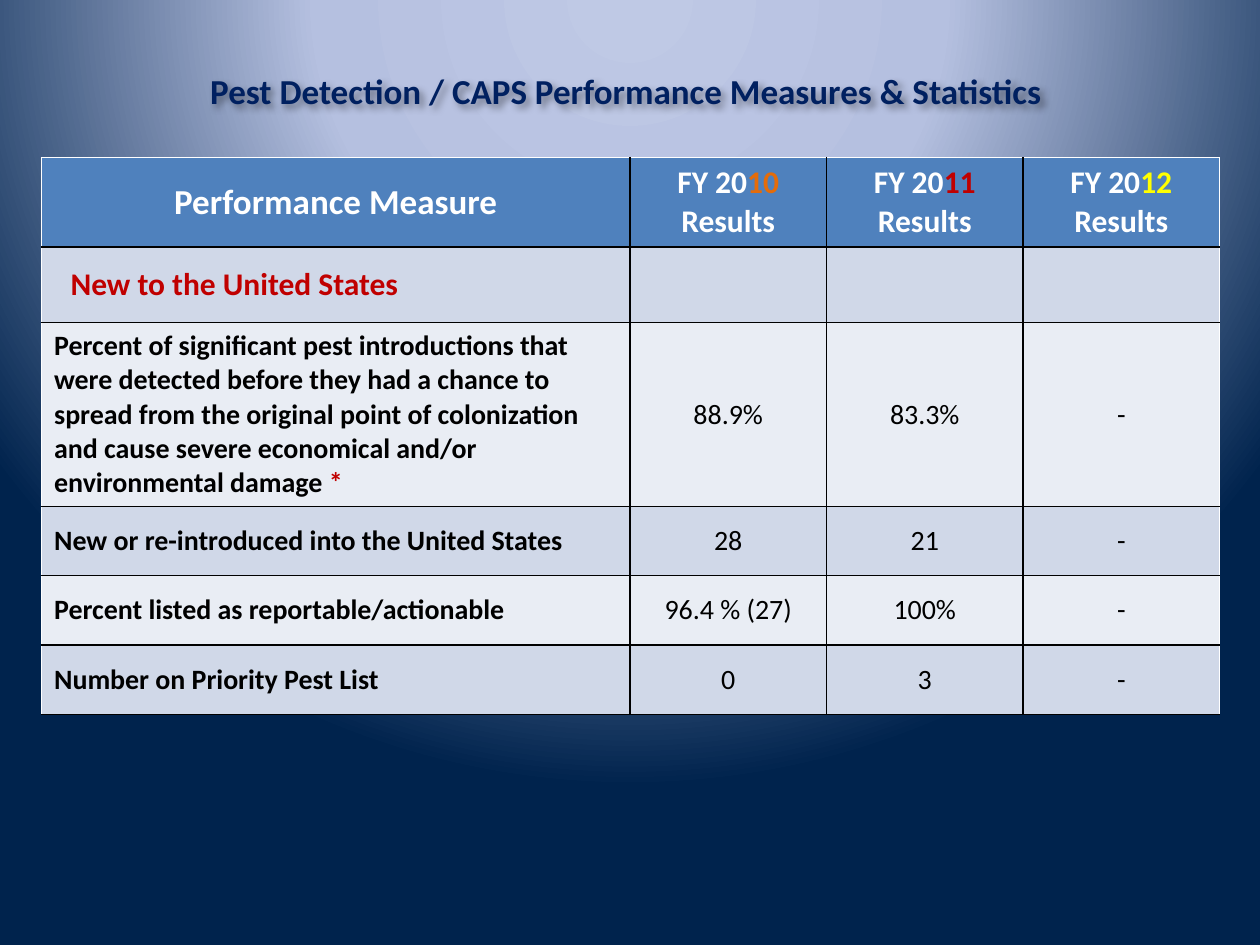
from lxml import etree
from pptx import Presentation
from pptx.dml.color import RGBColor
from pptx.enum.text import MSO_ANCHOR, MSO_AUTO_SIZE, PP_ALIGN
from pptx.oxml import parse_xml
from pptx.oxml.ns import nsdecls, qn
from pptx.util import Inches, Pt

MIDDLE = MSO_ANCHOR.MIDDLE
CENTER, LEFT = PP_ALIGN.CENTER, PP_ALIGN.LEFT
FIT_SHAPE = MSO_AUTO_SIZE.SHAPE_TO_FIT_TEXT

THEME = {
    "font": "Calibri",
    "title": "002060", "black": "000000", "white": "FFFFFF",
    "orange": "E46C0A", "red": "C00000", "yellow": "FFFF00",
    "header": "4F81BD", "bands": ("D0D8E8", "E9EDF4"),
    "backdrop": ((0, "BFC9E5"), (40, "B5C0E0"), (100, "00234D")),
    "large": 20, "medium": 18, "body": 16, "border": 1,
}

TITLE = "Pest Detection / CAPS Performance Measures & Statistics"
MEASURE_HEADING = "Performance Measure"
YEARS = [("10", "orange"), ("11", "red"), ("12", "yellow")]
SECTION = "New to the United States"
MEASURES = [
    ("Percent of significant pest introductions that were detected before they "
     "had a chance to spread from the original point of colonization and cause "
     "severe economical and/or environmental damage ", "88.9%", "83.3%", "-"),
    ("New or re-introduced into the United States", "28", "21", "-"),
    ("Percent listed as reportable/actionable", "96.4 % (27)", "100%", "-"),
    ("Number on Priority Pest List", "0", "3", "-"),
]
FOOTNOTE_MARK = "*"

COLUMN_WIDTHS = [4.67, 1.56, 1.56, 1.56]
ROW_HEIGHTS = [0.5, 0.6, 1.3, 0.55, 0.55, 0.55]
SECTION_INDENT = 0.13


def color(name):
    return RGBColor.from_string(THEME[name])


def write(para, spans, size, ink, bold=True, align=LEFT):
    """Fill a paragraph with (text, colour name or None) spans."""
    para.alignment = align
    para.font.name = THEME["font"]
    para.font.size = Pt(THEME[size])
    para.font.bold = bold
    para.font.color.rgb = color(ink)
    for text, accent in spans:
        span = para.add_run()
        span.text = text
        if accent:
            span.font.color.rgb = color(accent)


def paint_background(page):
    """Radial gradient whose centre lies above the top edge."""
    page.background.fill.gradient()
    gradient = next(page._element.iter(qn("a:gradFill")))
    stops = "".join(
        f'<a:gs pos="{place * 1000}"><a:srgbClr val="{value}"/></a:gs>'
        for place, value in THEME["backdrop"])
    gradient.getparent().replace(gradient, parse_xml(
        f'<a:gradFill {nsdecls("a")} rotWithShape="1"><a:gsLst>{stops}</a:gsLst>'
        '<a:path path="circle"><a:fillToRect l="50000" t="-80000" r="50000" '
        'b="180000"/></a:path></a:gradFill>'))


def add_title(page):
    box = page.shapes.add_textbox(Inches(1.57), Inches(0.5), Inches(6.86), Inches(0.44))
    frame = box.text_frame
    frame.word_wrap = False
    frame.auto_size = FIT_SHAPE
    write(frame.paragraphs[0], [(TITLE, None)], "large", "title")
    box._element.spPr.append(parse_xml(
        f'<a:effectLst {nsdecls("a")}><a:outerShdw blurRad="50800" dist="38100" '
        'dir="2700000" algn="tl" rotWithShape="0"><a:srgbClr val="000000">'
        '<a:alpha val="40000"/></a:srgbClr></a:outerShdw></a:effectLst>'))


def set_borders(cell, sides):
    """Sides maps L, R, T and B to colour names; they go before the fill."""
    properties = cell._tc.get_or_add_tcPr()
    for index, (side, name) in enumerate(sides.items()):
        line = etree.Element(qn(f"a:ln{side}"), w=str(Pt(THEME["border"])))
        fill = etree.SubElement(line, qn("a:solidFill"))
        etree.SubElement(fill, qn("a:srgbClr"), val=THEME[name])
        properties.insert(index, line)


def add_table(page):
    table = page.shapes.add_table(
        len(ROW_HEIGHTS), len(COLUMN_WIDTHS), Inches(0.33), Inches(1.25),
        Inches(sum(COLUMN_WIDTHS)), Inches(sum(ROW_HEIGHTS))).table
    for column, width in zip(table.columns, COLUMN_WIDTHS):
        column.width = Inches(width)
    for row, height in zip(table.rows, ROW_HEIGHTS):
        row.height = Inches(height)

    last = len(COLUMN_WIDTHS) - 1
    for r, row in enumerate(table.rows):
        for c, cell in enumerate(row.cells):
            cell.vertical_anchor = MIDDLE
            cell.fill.solid()
            fill = THEME["bands"][(r - 1) % 2] if r else THEME["header"]
            cell.fill.fore_color.rgb = RGBColor.from_string(fill)
            set_borders(cell, {
                "L": "black" if c else "white",
                "R": "white" if c == last else "black",
                "T": "black" if r else "white",
                "B": "black",
            })
    return table


def fill_table(table):
    def para_at(r, c):
        return table.cell(r, c).text_frame.paragraphs[0]

    write(para_at(0, 0), [(MEASURE_HEADING, None)], "large", "white", align=CENTER)
    for c, (year, accent) in enumerate(YEARS, start=1):
        spans = [("FY 20", None), (year, accent), (" Results", None)]
        write(para_at(0, c), spans, "medium", "white", align=CENTER)

    section = para_at(1, 0)
    write(section, [(SECTION, None)], "medium", "red")
    section._p.get_or_add_pPr().set("marL", str(Inches(SECTION_INDENT)))
    for c in range(1, len(COLUMN_WIDTHS)):
        write(para_at(1, c), [], "medium", "black")

    for r, (label, *results) in enumerate(MEASURES, start=2):
        spans = [(label, None)]
        if r == 2:
            spans.append((FOOTNOTE_MARK, "red"))
        write(para_at(r, 0), spans, "body", "black")
        for c, result in enumerate(results, start=1):
            write(para_at(r, c), [(result, None)], "body", "black", False, CENTER)


def main():
    deck = Presentation()
    deck.slide_width, deck.slide_height = Inches(10), Inches(7.5)
    page = deck.slides.add_slide(deck.slide_layouts[6])
    paint_background(page)
    fill_table(add_table(page))
    add_title(page)
    deck.save("out.pptx")


if __name__ == "__main__":
    main()
